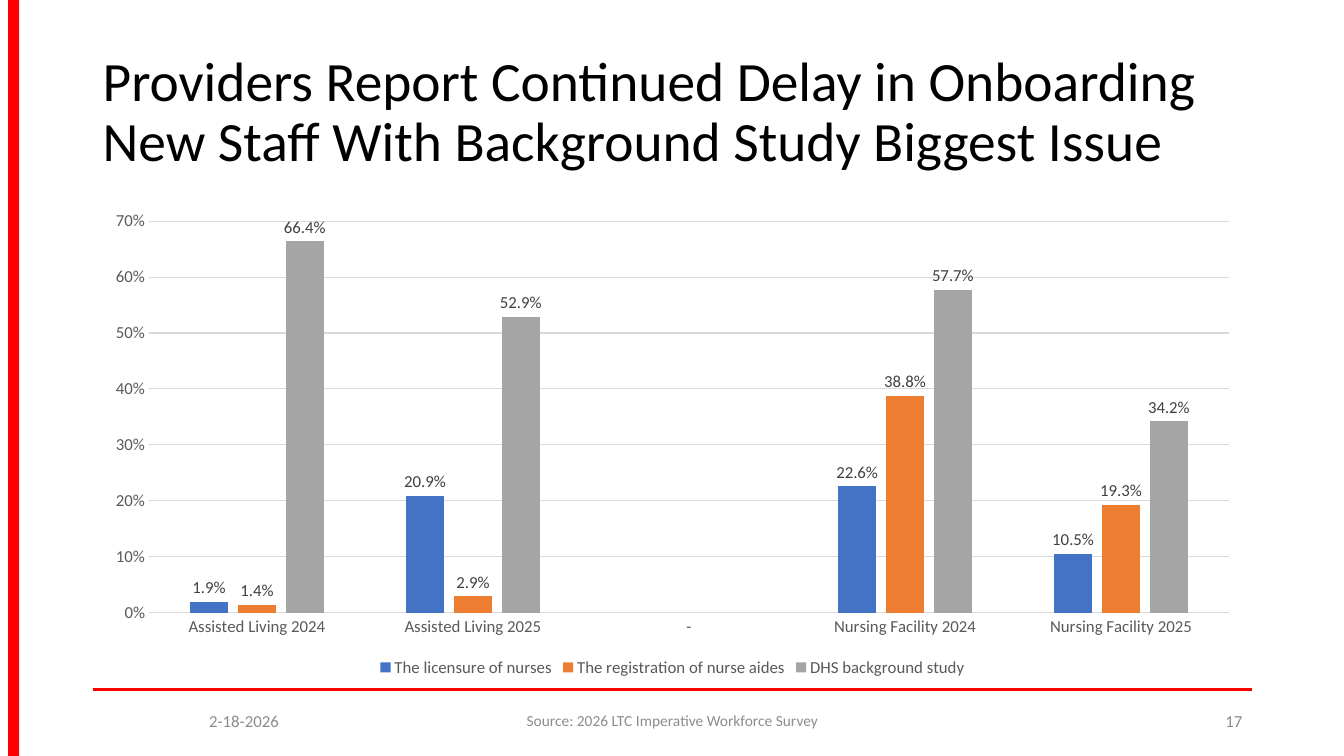
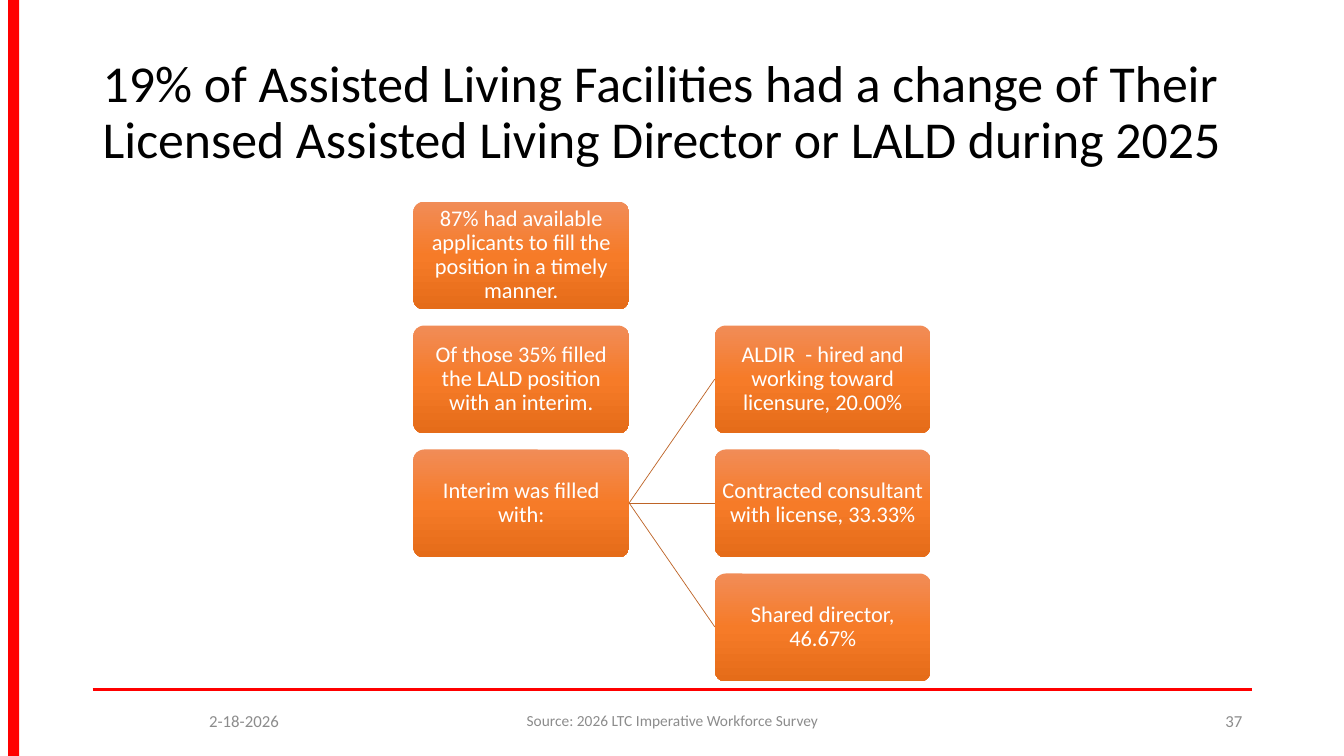
from copy import deepcopy

from lxml.etree import SubElement
from pptx import Presentation
from pptx.chart.data import CategoryChartData
from pptx.dml.color import RGBColor
from pptx.enum.chart import XL_CHART_TYPE as CHART, XL_LABEL_POSITION as LABEL
from pptx.enum.chart import XL_LEGEND_POSITION as LEGEND, XL_TICK_MARK as TICK
from pptx.enum.shapes import MSO_CONNECTOR as CONNECTOR, MSO_SHAPE as SHAPE
from pptx.enum.text import MSO_ANCHOR as ANCHOR, PP_ALIGN as ALIGN
from pptx.oxml.ns import qn
from pptx.util import Pt

PX = 9144
WIDTH, HEIGHT = 1333, 750
LEFT, CONTENT_W, TOP = 92, 1150, 200
FONT = "Calibri"
COLORS = {
    "accent": "FF0000", "title": "000000", "footer": "8C8C8C",
    "axis": "595959", "label": "404040", "grid": "D9D9D9",
    "nurses": "4472C4", "aides": "ED7D31", "study": "A5A5A5",
    "light": "F18C57", "mid": "F67B28", "dark": "E56C19",
    "link": "BE6427", "white": "FFFFFF",
}
BOX_W, BOX_H, ROW_STEP = 214, 107, 123
COLUMNS = (410, 709)


def px(*lengths):
    return [n * PX for n in lengths]


def rgb(name):
    return RGBColor.from_string(COLORS[name])


def set_font(font, size, color):
    font.name, font.size = FONT, Pt(size)
    font.color.rgb = rgb(color)


def set_text(sp, text, size, color, align, spacing=1.0):
    tf = sp.text_frame
    tf.word_wrap = True
    tf.vertical_anchor = ANCHOR.MIDDLE
    p = tf.paragraphs[0]
    p.text, p.alignment, p.line_spacing = text, align, spacing
    set_font(p.font, size, color)
    return tf


def add_text(s, box, *style):
    set_text(s.shapes.add_textbox(*px(*box)), *style)


def add_line(s, start, end, color, width):
    line = s.shapes.add_connector(CONNECTOR.STRAIGHT, *px(*start, *end))
    line.line.color.rgb = rgb(color)
    line.line.width = Pt(width)
    SubElement(line._element.spPr, qn("a:effectLst"))


def add_frame(prs, title, title_size, number):
    s = prs.slides.add_slide(prs.slide_layouts[6])
    add_line(s, (LEFT, 684), (LEFT + CONTENT_W, 684), "accent", 2)
    band = s.shapes.add_shape(SHAPE.RECTANGLE, *px(8, 0, 11, HEIGHT))
    band.shadow.inherit = False
    band.fill.solid()
    band.fill.fore_color.rgb = rgb("accent")
    band.line.fill.background()
    add_text(s, (LEFT, 40, CONTENT_W, 145), title, title_size, "title", ALIGN.LEFT, 0.9)
    footers = (
        (92, 300, "2-18-2026", 12, ALIGN.CENTER),
        (442, 450, "Source: 2026 LTC Imperative Workforce Survey", 11, ALIGN.CENTER),
        (942, 300, number, 12, ALIGN.RIGHT),
    )
    for x, w, text, size, align in footers:
        add_text(s, (x, 695, w, 40), text, size, "footer", align)
    return s


def add_column_chart(s, categories, series):
    data = CategoryChartData(number_format="0.0%")
    data.categories = categories
    for name, _, values in series:
        data.add_series(name, values)
    frame = s.shapes.add_chart(
        CHART.COLUMN_CLUSTERED, *px(LEFT, TOP, CONTENT_W, 476), data)
    chart = frame.chart
    set_font(chart.font, 12, "axis")
    chart.has_title = False
    chart.has_legend = True
    chart.legend.position = LEGEND.BOTTOM
    chart.legend.include_in_layout = False
    set_font(chart.legend.font, 12, "axis")

    for axis in (chart.category_axis, chart.value_axis):
        axis.major_tick_mark = axis.minor_tick_mark = TICK.NONE
        set_font(axis.tick_labels.font, 12, "axis")
    value_axis = chart.value_axis
    value_axis.minimum_scale, value_axis.maximum_scale = 0, 0.7
    value_axis.major_unit = 0.1
    value_axis.tick_labels.number_format = "0%"
    value_axis.tick_labels.number_format_is_linked = False
    value_axis.format.line.fill.background()
    for line in (chart.category_axis.format.line, value_axis.major_gridlines.format.line):
        line.color.rgb = rgb("grid")
        line.width = Pt(0.75)

    plot = chart.plots[0]
    plot.gap_width, plot.overlap = 219, -27
    plot.vary_by_categories = False
    for bars, (_, color, _) in zip(plot.series, series):
        bars.format.fill.solid()
        bars.format.fill.fore_color.rgb = rgb(color)
        labels = bars.data_labels
        labels.show_value = True
        labels.number_format = "0.0%"
        labels.number_format_is_linked = False
        labels.position = LABEL.OUTSIDE_END
        set_font(labels.font, 12, "label")


def fill_gradient(fill, colors):
    fill.gradient()
    fill.gradient_angle = 270
    first = fill._xPr.find(qn("a:gradFill")).find(qn("a:gsLst"))[0]
    first.addnext(deepcopy(first))
    for i, (stop, color) in enumerate(zip(fill.gradient_stops, colors)):
        stop.position = i / (len(colors) - 1)
        stop.color.rgb = rgb(color)


def add_box(s, column, row, text):
    box = px(COLUMNS[column], TOP + row * ROW_STEP, BOX_W, BOX_H)
    sp = s.shapes.add_shape(SHAPE.ROUNDED_RECTANGLE, *box)
    sp.adjustments[0] = 0.1
    sp.shadow.inherit = False
    fill_gradient(sp.fill, ("light", "mid", "dark"))
    sp.line.fill.background()
    tf = set_text(sp, text, 16, "white", ALIGN.CENTER, 0.9)
    tf.margin_left = tf.margin_right = tf.margin_top = tf.margin_bottom = 4 * PX


def add_link(s, from_row, to_row):
    start, end = (TOP + row * ROW_STEP + BOX_H // 2 for row in (from_row, to_row))
    add_line(s, (COLUMNS[0] + BOX_W, start), (COLUMNS[1], end), "link", 0.5)


def onboarding_slide(prs):
    s = add_frame(prs, "Providers Report Continued Delay in Onboarding New Staff "
                  "With Background Study Biggest Issue", 39.6, "17")
    add_column_chart(
        s,
        ("Assisted Living 2024", "Assisted Living 2025", "-",
         "Nursing Facility 2024", "Nursing Facility 2025"),
        (("The licensure of nurses", "nurses", (0.019, 0.209, None, 0.226, 0.105)),
         ("The registration of nurse aides", "aides", (0.014, 0.029, None, 0.388, 0.193)),
         ("DHS background study", "study", (0.664, 0.529, None, 0.577, 0.342))))


def director_slide(prs):
    s = add_frame(prs, "19% of Assisted Living Facilities had a change of Their Licensed "
                  "Assisted Living Director or LALD during 2025", 37, "37")
    findings = (
        "87% had available applicants to fill the position in a timely manner.",
        "Of those 35% filled the LALD position with an interim.",
        "Interim was filled with:",
    )
    interims = (
        "ALDIR  - hired and working toward licensure, 20.00%",
        "Contracted consultant with license, 33.33%",
        "Shared director, 46.67%",
    )
    for row, text in enumerate(findings):
        add_box(s, 0, row, text)
    for row, text in enumerate(interims, 1):
        add_link(s, len(findings) - 1, row)
        add_box(s, 1, row, text)


def main():
    prs = Presentation()
    prs.slide_width, prs.slide_height = px(WIDTH, HEIGHT)
    onboarding_slide(prs)
    director_slide(prs)
    prs.save("out.pptx")


if __name__ == "__main__":
    main()
